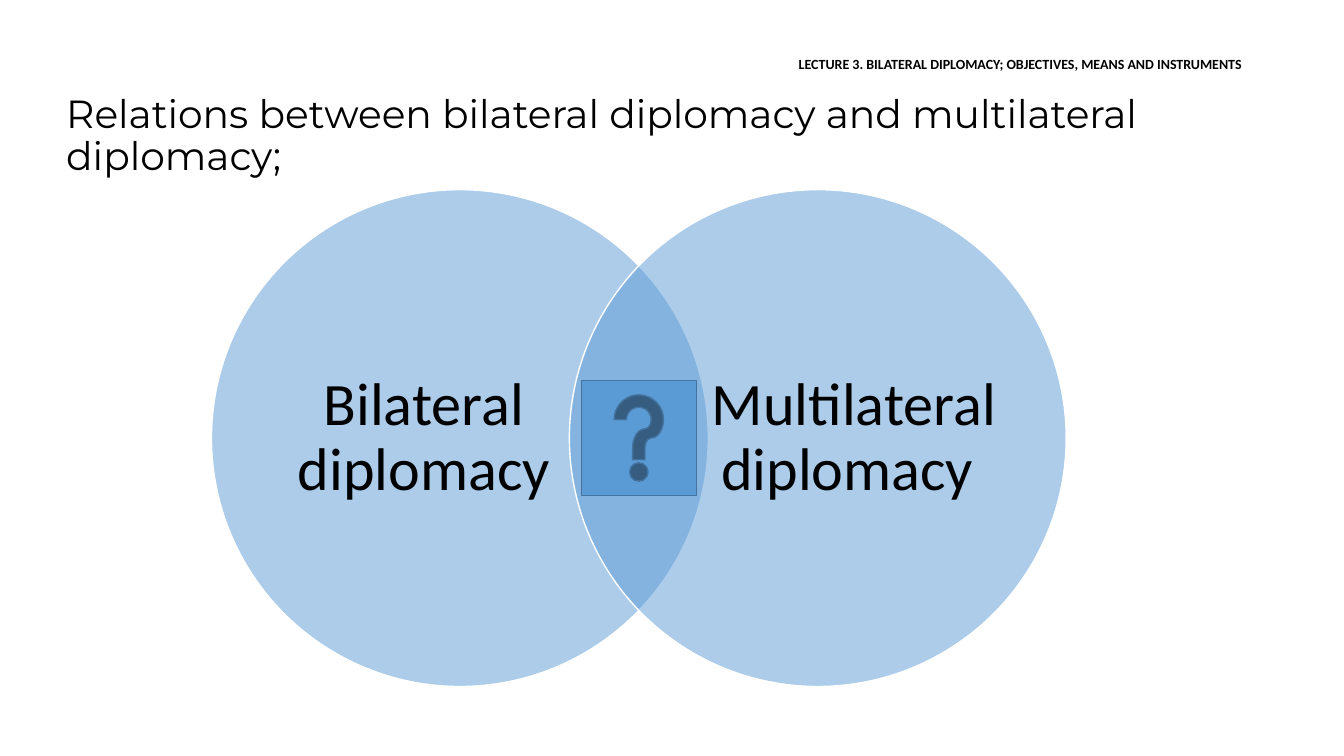
from dataclasses import dataclass

from lxml import etree
from pptx import Presentation
from pptx.dml.color import RGBColor
from pptx.enum.shapes import MSO_SHAPE
from pptx.enum.text import MSO_ANCHOR, MSO_AUTO_SIZE, PP_ALIGN
from pptx.oxml.ns import qn
from pptx.util import Cm, Pt

ELLIPSE, HELP_BUTTON = MSO_SHAPE.OVAL, MSO_SHAPE.ACTION_BUTTON_HELP
TOP, MIDDLE = MSO_ANCHOR.TOP, MSO_ANCHOR.MIDDLE
LEFT, CENTER, RIGHT = PP_ALIGN.LEFT, PP_ALIGN.CENTER, PP_ALIGN.RIGHT
NO_AUTOFIT = MSO_AUTO_SIZE.NONE

COLORS = {"text": "000000", "blue": "5B9BD5", "rim": "FFFFFF", "button_edge": "43739E"}

# Venn geometry in cm: both circles mirror each other about the centre
CENTER_X, CENTER_Y = 16.1, 11.04
DIAMETER, CIRCLE_OFFSET = 12.52, 4.51
LABEL_WIDTH, LABEL_HEIGHT, LABEL_OFFSET = 7.21, 9.58, 5.42
BUTTON_SIZE = 2.9


@dataclass
class Area:
    left: float
    top: float
    width: float
    height: float

    def lengths(self) -> tuple:
        return Cm(self.left), Cm(self.top), Cm(self.width), Cm(self.height)


@dataclass
class TextStyle:
    font: str
    size: float
    align: int
    anchor: int
    bold: bool = False


@dataclass
class Topic:
    label: str
    side: int


HEADER = TextStyle("Calibri", 10, RIGHT, MIDDLE, bold=True)
STATEMENT = TextStyle("Montserrat", 28, LEFT, TOP)
TOPIC_LABEL = TextStyle("Calibri", 43, CENTER, MIDDLE)
TOPICS = [Topic("Bilateral diplomacy", -1), Topic("Multilateral diplomacy ", 1)]


def centered(x: float, width: float, height: float) -> Area:
    return Area(x - width / 2, CENTER_Y - height / 2, width, height)


def write(frame, text: str, style: TextStyle) -> None:
    frame.word_wrap = True
    frame.auto_size = NO_AUTOFIT
    frame.vertical_anchor = style.anchor
    paragraph = frame.paragraphs[0]
    paragraph.alignment = style.align
    paragraph.line_spacing = 0.9
    run = paragraph.add_run()
    run.text = text
    run.font.name = style.font
    run.font.size = Pt(style.size)
    run.font.bold = style.bold
    run.font.color.rgb = RGBColor.from_string(COLORS["text"])


def add_text(slide, area: Area, text: str, style: TextStyle):
    frame = slide.shapes.add_textbox(*area.lengths()).text_frame
    write(frame, text, style)
    return frame


def add_blue_shape(slide, kind: int, area: Area, edge: str, opacity: int = 100) -> None:
    shape = slide.shapes.add_shape(kind, *area.lengths())
    shape.shadow.inherit = False
    shape.fill.solid()
    shape.fill.fore_color.rgb = RGBColor.from_string(COLORS["blue"])
    shape.line.color.rgb = RGBColor.from_string(COLORS[edge])
    shape.line.width = Pt(1)
    if opacity < 100:
        fill_color = shape.fill._xPr.find(qn("a:solidFill"))[0]
        etree.SubElement(fill_color, qn("a:alpha"), val=str(opacity * 1000))


def add_topic(slide, topic: Topic) -> None:
    circle = centered(CENTER_X + topic.side * CIRCLE_OFFSET, DIAMETER, DIAMETER)
    add_blue_shape(slide, ELLIPSE, circle, "rim", opacity=50)
    label = centered(CENTER_X + topic.side * LABEL_OFFSET, LABEL_WIDTH, LABEL_HEIGHT)
    frame = add_text(slide, label, topic.label, TOPIC_LABEL)
    frame.margin_left = frame.margin_right = frame.margin_top = frame.margin_bottom = 0


def main() -> None:
    presentation = Presentation()
    presentation.slide_width, presentation.slide_height = Cm(33.87), Cm(19.05)
    slide = presentation.slides.add_slide(presentation.slide_layouts[5])

    # Lecture header
    header = slide.shapes.title
    header.left, header.top, header.width, header.height = Area(2.33, 1.02, 29.21, 1.24).lengths()
    write(header.text_frame, "LECTURE 3. BILATERAL DIPLOMACY; OBJECTIVES, MEANS AND INSTRUMENTS", HEADER)

    # Statement
    add_text(slide, Area(1.42, 2.26, 30.76, 15.67),
             "Relations between bilateral diplomacy and multilateral diplomacy;", STATEMENT)

    # Overlapping circles with the open question between them
    for topic in TOPICS:
        add_topic(slide, topic)
    add_blue_shape(slide, HELP_BUTTON, centered(CENTER_X, BUTTON_SIZE, BUTTON_SIZE), "button_edge")

    presentation.save("out.pptx")


if __name__ == "__main__":
    main()
